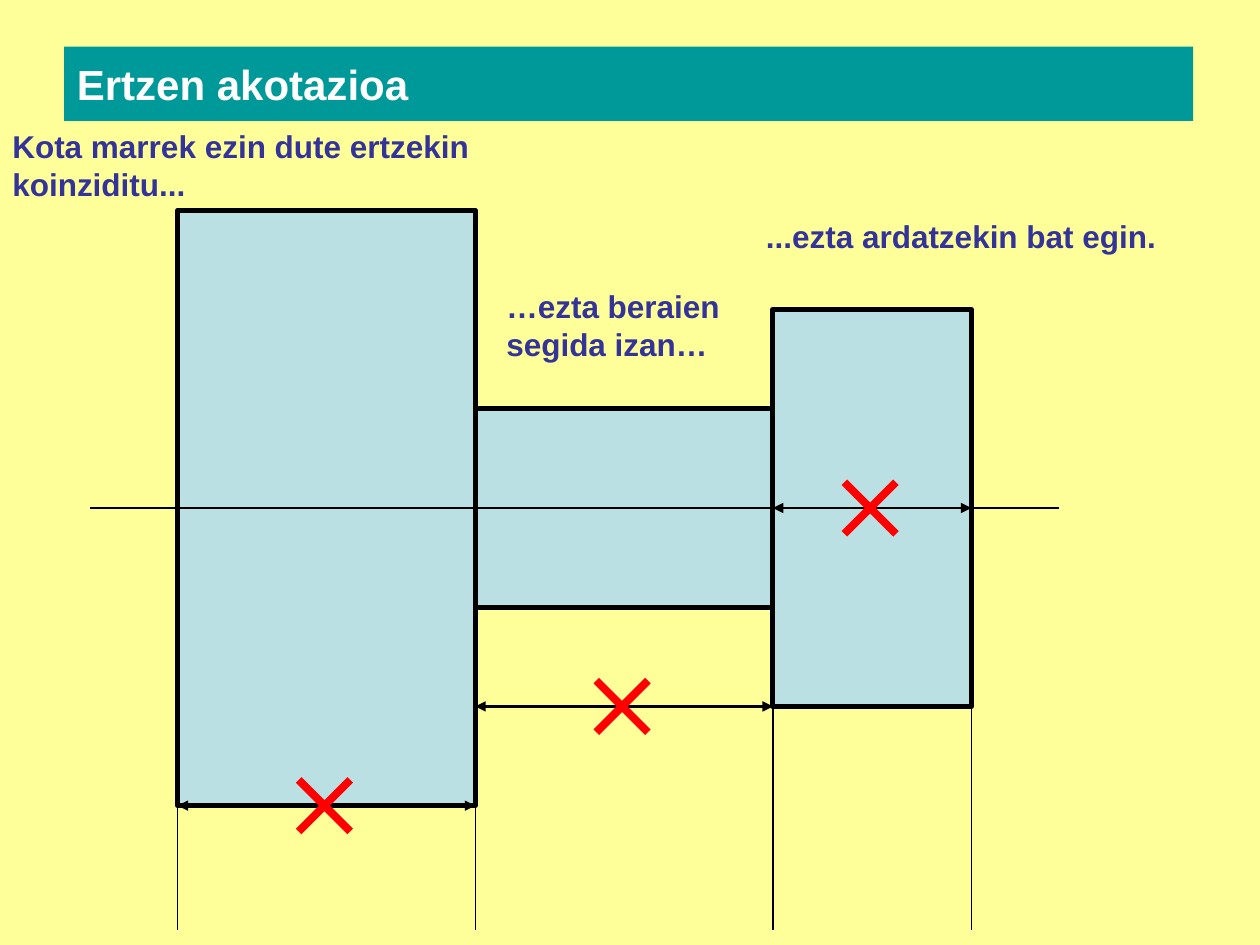
from pptx import Presentation
from pptx.dml.color import RGBColor
from pptx.enum.shapes import MSO_CONNECTOR as Conn, MSO_SHAPE as Shape
from pptx.enum.text import MSO_ANCHOR as Anchor, MSO_AUTO_SIZE as AutoSize, PP_ALIGN as Align
from pptx.oxml.ns import qn
from pptx.util import Cm, Inches, Pt
from lxml.etree import SubElement

COLORS = {
    "background": "FFFF99",
    "banner": "009999",
    "title": "FFFFFF",
    "note": "333399",
    "part": "BBE0E3",
    "edge": "000000",
    "error": "FF0000",
}
AXIS_ROW = 3
FOOT_ROW = 7.25
SECTIONS = [(0, 3, 6), (3, 3, 2), (6, 2, 4)]
DIMENSIONS = [(6, 8, AXIS_ROW), (3, 6, 5), (0, 3, 6)]
EXTENSIONS = [(0, 6), (3, 6), (6, 5), (8, 5)]
NOTES = [
    ((0, 0.96, 4.94, 0.71), "Kota marrek ezin dute ertzekin koinziditu..."),
    ((3.92, 2.23, 2.36, 0.71), "…ezta beraien segida izan…"),
    ((5.98, 1.67, 4.02, 0.4), "...ezta ardatzekin bat egin."),
]


def rgb(name):
    """Return the named colour."""
    return RGBColor.from_string(COLORS[name])


def set_font(p, size, color):
    """Give a paragraph the bold Arial of this slide."""
    p.font.name = "Arial"
    p.font.size = Pt(size)
    p.font.bold = True
    p.font.color.rgb = rgb(color)


def add_line(shapes, start, end, width, color="edge", arrows=False):
    """Draw a straight line, with arrowheads at both ends if asked."""
    c = shapes.add_connector(Conn.STRAIGHT, *start, *end)
    c.line.width = Pt(width)
    c.line.color.rgb = rgb(color)
    if arrows:
        ln = c.line._get_or_add_ln()
        for tag in ("a:headEnd", "a:tailEnd"):
            SubElement(ln, qn(tag), type="triangle")
    SubElement(c._element.spPr, qn("a:effectLst"))


def add_title(s, box, text):
    """Turn the title placeholder into a banner that fills the box."""
    sp = s.shapes.title
    sp.left, sp.top, sp.width, sp.height = map(Inches, box)
    sp.fill.solid()
    sp.fill.fore_color.rgb = rgb("banner")
    tf = sp.text_frame
    tf.text = text
    tf.auto_size = AutoSize.NONE
    tf.vertical_anchor = Anchor.MIDDLE
    p = tf.paragraphs[0]
    p.alignment = Align.LEFT
    set_font(p, 24, "title")


def add_note(s, box, text):
    """Write a remark in the box."""
    tf = s.shapes.add_textbox(*map(Inches, box)).text_frame
    tf.word_wrap = True
    tf.text = text
    set_font(tf.paragraphs[0], 18, "note")


def add_cross(s, center, half):
    """Mark a point as wrong with a cross."""
    x, y = center
    group = s.shapes.add_group_shape()
    for side in (-half, half):
        add_line(group.shapes, (x + side, y - half), (x - side, y + half), 4.5, "error")


def add_drawing(s, left, top, unit):
    """Draw the stepped part and its wrong dimensions on a square grid."""

    def at(col, row):
        """Return the position of a grid point."""
        return int(left + col * unit), int(top + row * unit)

    for col, cols, rows in SECTIONS:
        sp = s.shapes.add_shape(
            Shape.RECTANGLE, *at(col, AXIS_ROW - rows / 2), cols * unit, rows * unit
        )
        sp.shadow.inherit = False
        sp.fill.solid()
        sp.fill.fore_color.rgb = rgb("part")
        sp.line.color.rgb = rgb("edge")
        sp.line.width = Pt(3)

    add_line(s.shapes, at(-0.88, AXIS_ROW), at(8.88, AXIS_ROW), 1.5)
    for col, row in EXTENSIONS:
        add_line(s.shapes, at(col, row), at(col, FOOT_ROW), 0.75)
    for first, last, row in DIMENSIONS:
        add_line(s.shapes, at(first, row), at(last, row), 1.5, arrows=True)
        add_cross(s, at((first + last) / 2 - 0.02, row), int(0.26 * unit))


def main():
    """Build and save the slide."""
    prs = Presentation()
    prs.slide_width, prs.slide_height = Inches(10), Inches(7.5)
    s = prs.slides.add_slide(prs.slide_layouts[5])
    s.background.fill.solid()
    s.background.fill.fore_color.rgb = rgb("background")
    add_title(s, (0.51, 0.37, 8.96, 0.59), "Ertzen akotazioa")
    add_drawing(s, Inches(1.41), Inches(1.67), Cm(2))
    for box, text in NOTES:
        add_note(s, box, text)
    prs.save("out.pptx")


if __name__ == "__main__":
    main()
